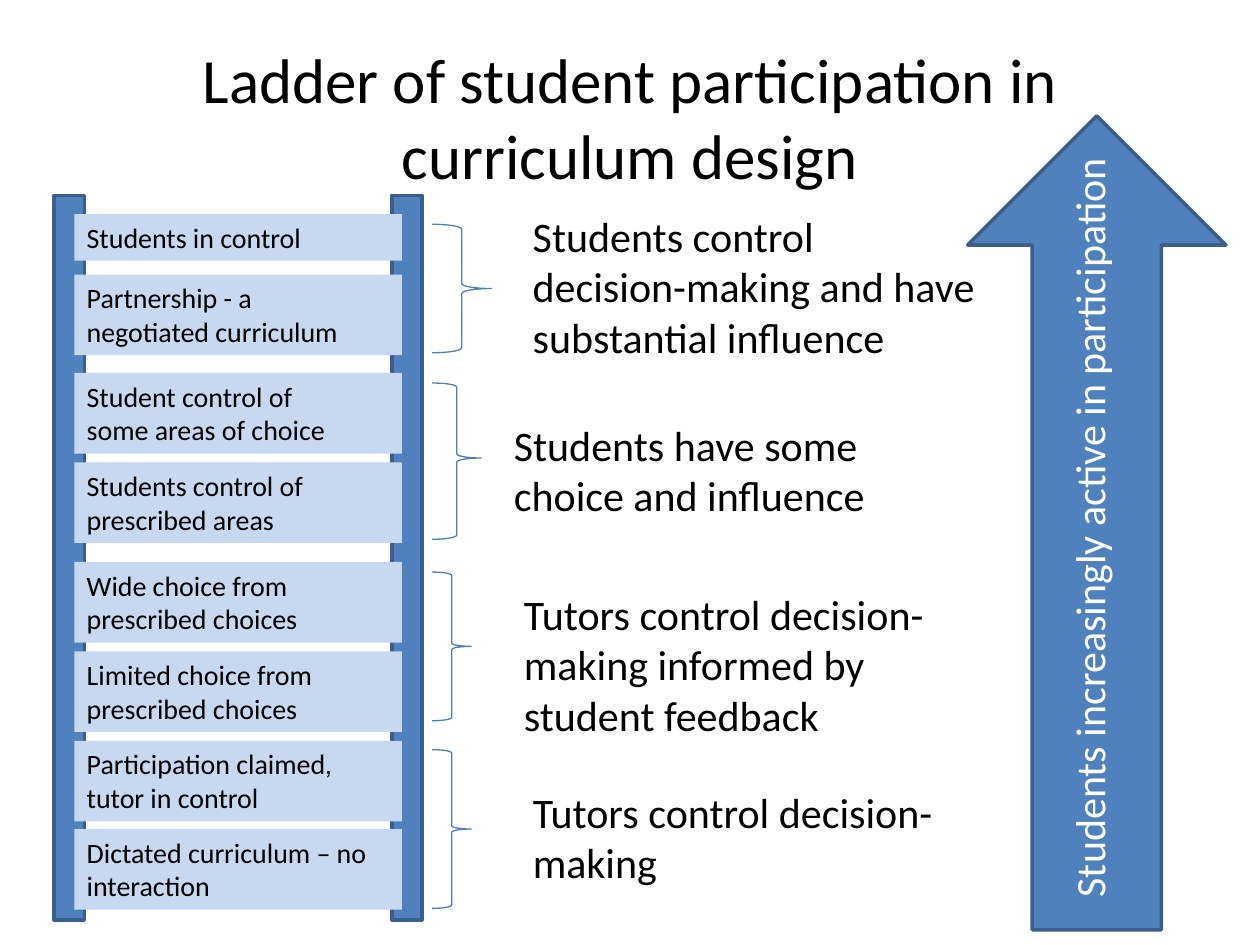
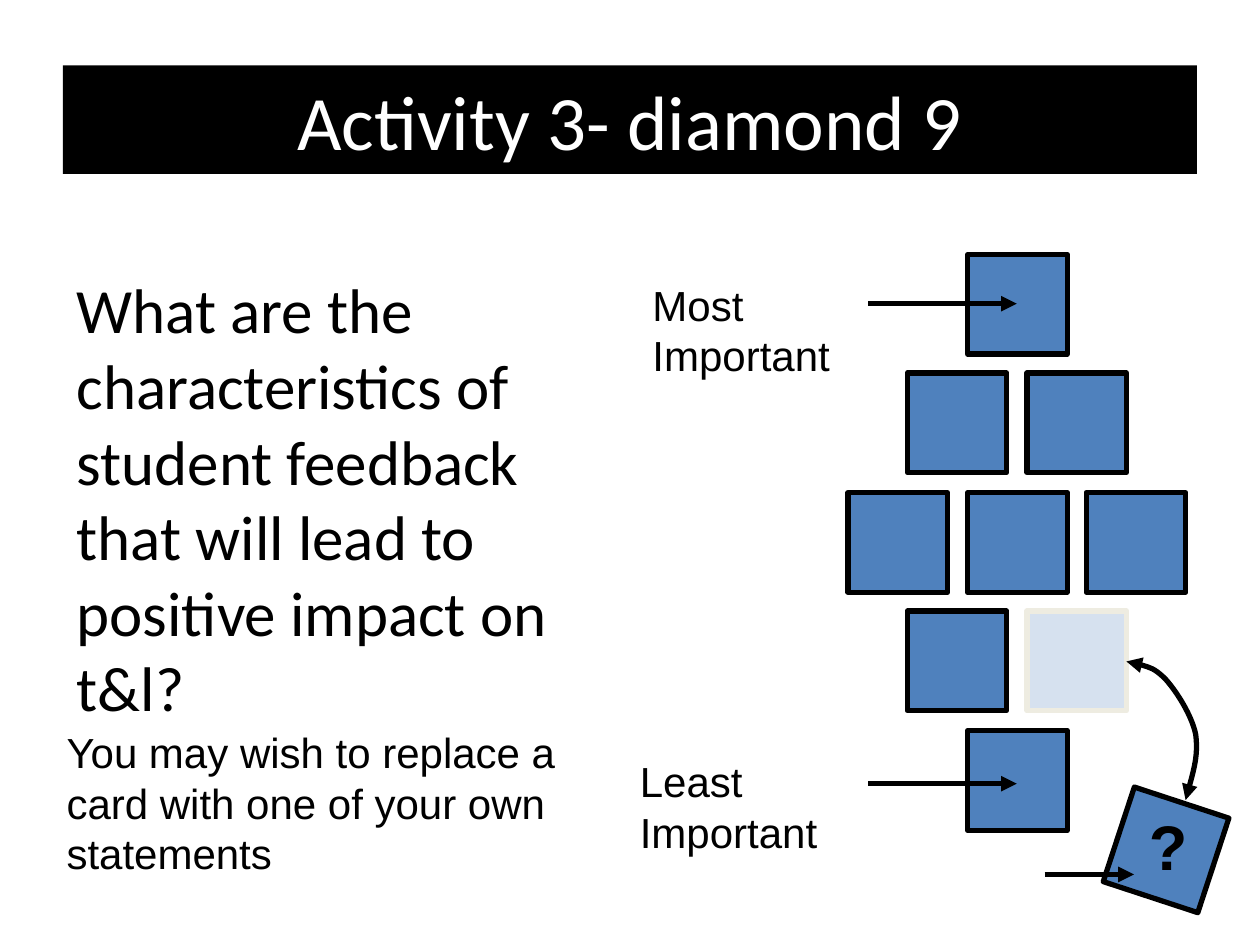
from lxml import etree
from pptx import Presentation
from pptx.dml.color import RGBColor
from pptx.enum.shapes import MSO_CONNECTOR, MSO_SHAPE
from pptx.enum.text import MSO_ANCHOR, PP_ALIGN
from pptx.oxml.ns import qn
from pptx.util import Pt

PX = 9144  # 100 px to the inch
BLUE = RGBColor(0x4F, 0x81, 0xBD)
DARK_BLUE = RGBColor(0x3A, 0x5F, 0x8C)
BRACE_BLUE = RGBColor(0x4B, 0x7E, 0xBC)
PALE_BLUE = RGBColor(0xC6, 0xD9, 0xF1)
CREAM = RGBColor(0xEE, 0xEC, 0xE1)
BLACK = RGBColor(0, 0, 0)
WHITE = RGBColor(0xFF, 0xFF, 0xFF)


def add_text(slide, box, text, size, font="Calibri", color=BLACK, title=False):
    """Add a wrapping text box; a title is centred both ways."""
    sp = slide.shapes.add_textbox(*(v * PX for v in box))
    tf = sp.text_frame
    tf.word_wrap = True
    tf.text = text
    tf.vertical_anchor = MSO_ANCHOR.MIDDLE if title else MSO_ANCHOR.TOP
    for p in tf.paragraphs:
        p.alignment = PP_ALIGN.CENTER if title else PP_ALIGN.LEFT
        for r in p.runs:
            r.font.size = Pt(size)
            r.font.name = font
            r.font.color.rgb = color
    return sp


def add_shape(slide, kind, box, fill, line, width):
    sp = slide.shapes.add_shape(kind, *(v * PX for v in box))
    sp.shadow.inherit = False
    if fill is None:
        sp.fill.background()
    else:
        sp.fill.solid()
        sp.fill.fore_color.rgb = fill
    sp.line.color.rgb = line
    sp.line.width = Pt(width)
    return sp


prs = Presentation()
prs.slide_width = 1000 * PX
prs.slide_height = 750 * PX
blank = prs.slide_layouts[6]

# Slide 1: ladder of participation
ladder = prs.slides.add_slide(blank)
add_text(ladder, (50, 30, 900, 125),
         "Ladder of student participation in curriculum design", 36, title=True)
for x in (43, 311):
    add_shape(ladder, MSO_SHAPE.RECTANGLE, (x, 155, 24, 575), BLUE, DARK_BLUE, 2)

rungs = [
    (170, 37, "Students in control"),
    (218, 64, "Partnership - a\nnegotiated curriculum"),
    (296, 64, "Student control of\nsome areas of choice"),
    (367, 64, "Students control of\nprescribed areas"),
    (446, 64, "Wide choice from\nprescribed choices"),
    (517, 64, "Limited choice from\nprescribed choices"),
    (588, 64, "Participation claimed,\ntutor in control"),
    (658, 64, "Dictated curriculum – no interaction"),
]
for y, height, label in rungs:
    rung = add_text(ladder, (59, y, 260, height), label, 16)
    rung.fill.solid()
    rung.fill.fore_color.rgb = PALE_BLUE

# Brace (top, width, height, point position), then box and wording of its meaning
levels = [
    ((178, 47, 102, 0.5), (413, 162, 394, 131),
     "Students control\ndecision-making and have substantial influence"),
    ((304, 39, 124, 0.48), (398, 328, 378, 91),
     "Students have some choice and influence"),
    ((454, 31, 118, 0.5), (406, 462, 339, 131),
     "Tutors control decision-making informed by student feedback"),
    ((595, 31, 126, 0.5), (413, 619, 339, 91),
     "Tutors control decision-making"),
]
for (y, width, height, point), box, meaning in levels:
    brace = add_shape(ladder, MSO_SHAPE.RIGHT_BRACE, (343, y, width, height),
                      None, BRACE_BLUE, 0.75)
    brace.adjustments[1] = point
    add_text(ladder, box, meaning, 24)

add_shape(ladder, MSO_SHAPE.UP_ARROW, (768, 92, 205, 646), BLUE, DARK_BLUE, 2)
arrow_label = add_text(ladder, (839, 84, 61, 638),
                       "Students increasingly active in participation", 24, color=WHITE)
arrow_label.text_frame._txBody.bodyPr.set("vert", "vert270")

# Slide 2: diamond nine
diamond = prs.slides.add_slide(blank)
band = add_text(diamond, (50, 52, 900, 86), "Activity 3- diamond 9", 44,
                color=WHITE, title=True)
band.fill.solid()
band.fill.fore_color.rgb = BLACK
add_text(diamond, (51, 210, 403, 495),
         "What are the characteristics of student feedback that will lead to "
         "positive impact on t&l?", 36)

CARD, PITCH = 79, 189  # the pitch is in half px
for row, count in enumerate((1, 2, 3, 2, 1)):
    for col in range(count):
        x = 768 + (2 * col - count + 1) * PITCH // 4
        y = 202 + row * PITCH // 2
        replaced = (row, col) == (3, 1)
        card = add_shape(diamond, MSO_SHAPE.RECTANGLE, (x, y, CARD, CARD),
                         BLUE, CREAM if replaced else BLACK, 3)
        if replaced:
            color = card._element.spPr.find(qn("a:solidFill"))[0]
            etree.SubElement(color, qn("a:alpha"), val="23000")

add_text(diamond, (508, 217, 189, 40), "Most Important", 24, "Arial")
add_text(diamond, (498, 595, 213, 40), "Least Important", 24, "Arial")
own_card = add_shape(diamond, MSO_SHAPE.RECTANGLE, (886, 635, CARD, CARD), BLUE, BLACK, 3)
own_card.rotation = 18.2
mark = add_text(diamond, (902, 636, 55, 70), "?", 36, "Arial")
mark.text_frame.paragraphs[0].runs[0].font.bold = True
add_text(diamond, (43, 572, 457, 70),
         "You may wish to replace a card with one of your own statements", 24, "Arial")

arrows = []
for x1, x2, y in ((689, 807, 241), (689, 807, 622), (829, 900, 694)):
    arrow = diamond.shapes.add_connector(MSO_CONNECTOR.STRAIGHT,
                                         x1 * PX, y * PX, x2 * PX, y * PX)
    etree.SubElement(arrow._element.spPr, qn("a:effectLst"))
    arrows.append((arrow, ("tailEnd",)))

# Swap curve: every three points after the start make one Bézier segment
builder = diamond.shapes.build_freeform(941, 635, scale=PX)
builder.add_line_segments([(946, 617), (951, 599), (949, 583),
                           (946, 568), (934, 549), (925, 539),
                           (916, 530), (905, 527), (894, 525)], close=False)
swap = builder.convert_to_shape()
swap.shadow.inherit = False
swap.fill.background()
outline = next(swap._element.iter(qn("a:path")))
segments = outline.findall(qn("a:lnTo"))
for i in range(0, len(segments), 3):
    bezier = etree.SubElement(outline, qn("a:cubicBezTo"))
    for segment in segments[i:i + 3]:
        bezier.append(segment[0])
        outline.remove(segment)
arrows.append((swap, ("headEnd", "tailEnd")))

for arrow, ends in arrows:
    arrow.line.color.rgb = BLACK
    arrow.line.width = Pt(3)
    for end in ends:
        etree.SubElement(arrow.line._ln, qn(f"a:{end}"), type="triangle")

prs.save("out.pptx")
